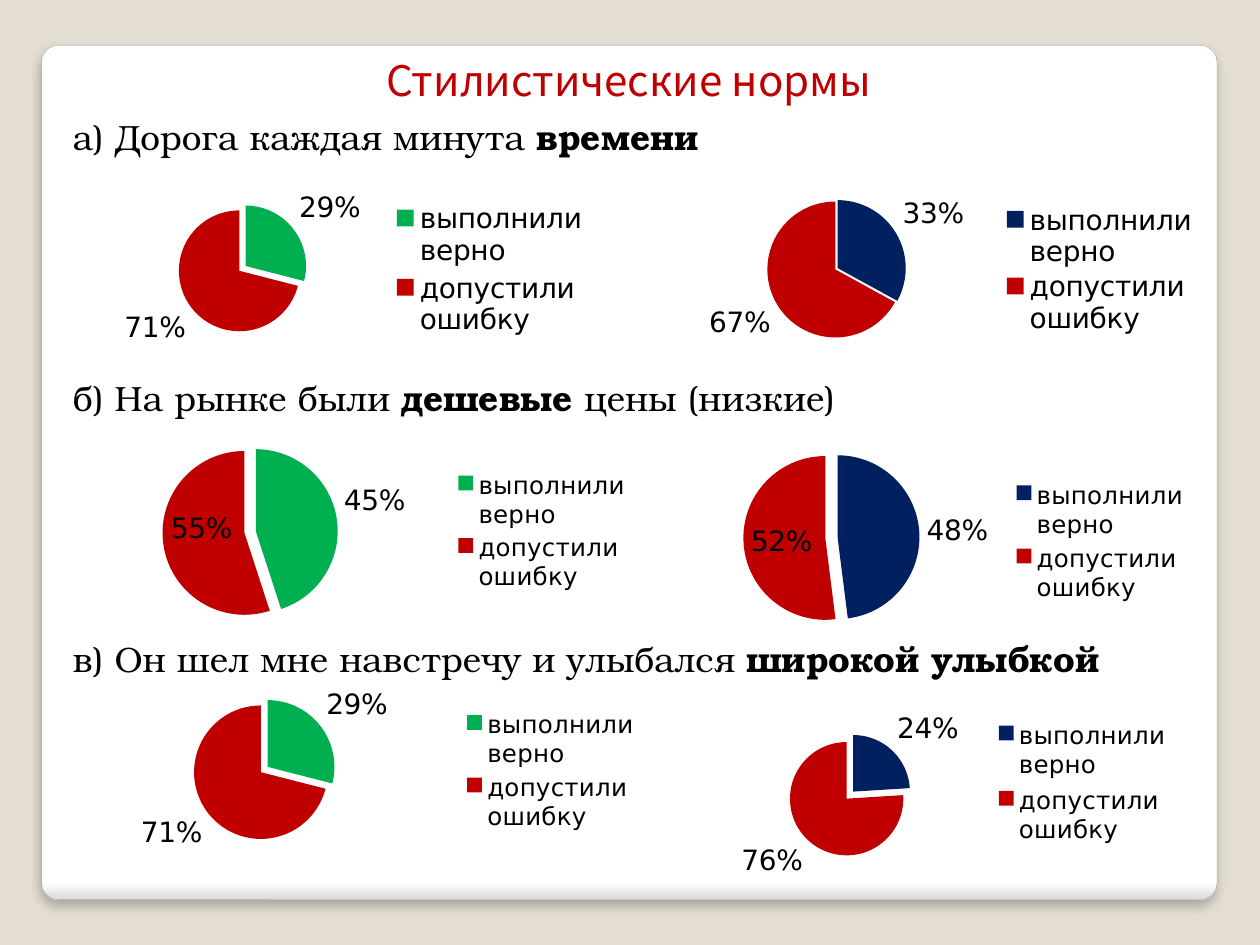
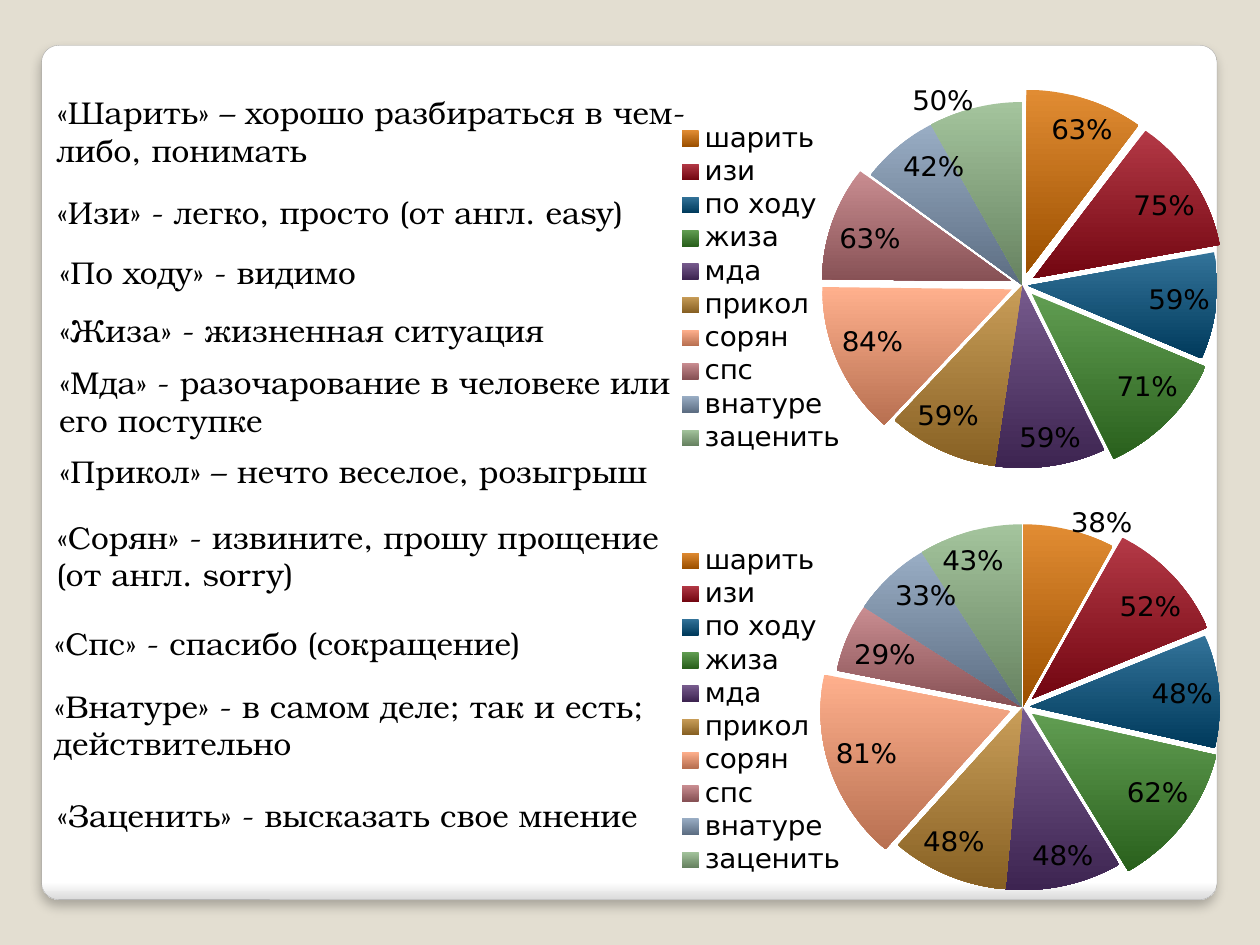
from lxml import etree
from pptx import Presentation
from pptx.chart.data import CategoryChartData
from pptx.dml.color import RGBColor
from pptx.enum.chart import XL_CHART_TYPE, XL_LABEL_POSITION, XL_LEGEND_POSITION
from pptx.enum.shapes import MSO_SHAPE
from pptx.enum.text import MSO_ANCHOR, PP_ALIGN
from pptx.oxml import parse_xml
from pptx.oxml.ns import nsdecls, qn
from pptx.util import Inches, Pt

PIE = XL_CHART_TYPE.PIE
RIGHT = XL_LEGEND_POSITION.RIGHT
OUT, IN = XL_LABEL_POSITION.OUTSIDE_END, XL_LABEL_POSITION.INSIDE_END
FIT = XL_LABEL_POSITION.BEST_FIT
CARD = MSO_SHAPE.ROUNDED_RECTANGLE
MIDDLE, CENTER = MSO_ANCHOR.MIDDLE, PP_ALIGN.CENTER

COLORS = {
    "back": "E3DED1", "card": "FFFFFF", "rim": "DADADA", "edge": "A4A4A4",
    "text": "000000", "title": "C00000",
    "wrong": "C00000", "green": "00B050", "navy": "002060",
}
SLANG = {
    "шарить": "D96F00", "изи": "A00818", "по ходу": "005080", "жиза": "398527",
    "мда": "553270", "прикол": "BB8630", "сорян": "FF9C70", "спс": "BC7076",
    "внатуре": "8098B5", "заценить": "8DB585",
}
SERIF, SANS, HEAD = "TeX Gyre Bonum", "DejaVu Sans", "Noto Sans CJK KR"
ANSWERS = ["выполнили верно", "допустили ошибку"]


def rgb(code):
    return RGBColor.from_string(code)


def tone(code, goal, part):
    """Mix a colour with a grey level (0 to 255) by the given part."""
    parts = [int(code[i:i + 2], 16) for i in (0, 2, 4)]
    return "".join(f"{round(p + (goal - p) * part):02X}" for p in parts)


def blend(fill, top, base, start=0):
    """Vertical two-colour gradient, the first colour held until start."""
    fill.gradient()
    fill.gradient_angle = 270
    for stop, code, place in zip(fill.gradient_stops, (top, base), (start, 1)):
        stop.color.rgb = rgb(code)
        stop.position = place


def layout(frame, box, inner=False):
    """Manual chart layout: box in slide inches, frame the chart's own box."""
    left, top, wide, high = frame
    x, y, w, h = box
    sizes = {"x": (x - left) / wide, "y": (y - top) / high, "w": w / wide, "h": h / high}
    node = parse_xml(f"<c:layout {nsdecls('c')}><c:manualLayout/></c:layout>")
    marks = {"layoutTarget": "inner"} if inner else {}
    marks |= {"xMode": "edge", "yMode": "edge"}
    marks |= {key: f"{size:.4f}" for key, size in sizes.items()}
    for key, mark in marks.items():
        etree.SubElement(node[0], qn(f"c:{key}")).set("val", mark)
    return node


class Deck:
    def __init__(self):
        self.prs = Presentation()
        self.prs.slide_width, self.prs.slide_height = Inches(10), Inches(7.5)
        self.slide = None

    def add(self, kind):
        self.slide = self.prs.slides.add_slide(self.prs.slide_layouts[kind])

    def style(self, font, **form):
        form = {"name": SERIF, "size": Pt(18)} | form
        font.color.rgb = rgb(form.pop("color", COLORS["text"]))
        for key, item in form.items():
            setattr(font, key, item)

    def base(self):
        """Put the background and the white card on the master."""
        master = self.prs.slide_master
        master.background.fill.solid()
        master.background.fill.fore_color.rgb = rgb(COLORS["back"])
        card = self.slide.shapes.add_shape(CARD, *map(Inches, (0.33, 0.36, 9.33, 6.78)))
        card.adjustments[0] = 0.02
        blend(card.fill, COLORS["card"], COLORS["rim"], 0.98)
        card.line.color.rgb = rgb(COLORS["edge"])
        card.line.width = Pt(0.16)
        card.shadow.inherit = False
        card.element.spPr.find(qn("a:effectLst")).append(parse_xml(
            f'<a:outerShdw {nsdecls("a")} blurRad="{Pt(6)}" dist="{Pt(4)}" dir="5400000">'
            '<a:srgbClr val="000000"><a:alpha val="25000"/></a:srgbClr></a:outerShdw>'))
        master.shapes.element.insert(2, card.element)

    def title(self, text):
        shape = self.slide.shapes.title
        for key, size in zip(("left", "top", "width", "height"), (0.5, 0.38, 8.98, 0.5)):
            setattr(shape, key, Inches(size))
        shape.text_frame.vertical_anchor = MIDDLE
        para = shape.text_frame.paragraphs[0]
        para.alignment = CENTER
        run = para.add_run()
        run.text = text
        self.style(run.font, name=HEAD, size=Pt(24), color=COLORS["title"])

    def text(self, text, box, size):
        """Text box; words between asterisks are bold."""
        frame = self.slide.shapes.add_textbox(*map(Inches, box)).text_frame
        frame.word_wrap = True
        for i, part in enumerate(text.split("*")):
            if part:
                run = frame.paragraphs[0].add_run()
                run.text = part
                self.style(run.font, size=Pt(size), bold=i % 2 == 1)

    def pie(self, frame, names, values, hues, bursts, spots, disc, key, size=16, shade=False):
        """Pie chart; disc is centre x, y and radius, key is the legend box."""
        data = CategoryChartData(number_format="0%")
        data.categories = names
        data.add_series("Series 1", [v / 100 for v in values])
        chart = self.slide.shapes.add_chart(PIE, *map(Inches, frame), data).chart
        chart.has_title = False
        self.style(chart.font, name=SANS, size=Pt(16))
        plot = chart.plots[0]
        plot.vary_by_categories = True
        for i, hue in enumerate(hues):
            point = plot.series[0].points[i]
            fill = point.format.fill
            if shade:
                blend(fill, tone(hue, 255, 0.2), tone(hue, 0, 0.28))
            else:
                fill.solid()
                fill.fore_color.rgb = rgb(hue)
            point.data_label.position = spots[i]
            if i in bursts:
                node = point.format.fill._xPr.getparent()
                burst = parse_xml(f'<c:explosion {nsdecls("c")} val="{bursts[i]}"/>')
                node.find(qn("c:spPr")).addprevious(burst)

        x, y, half = disc
        area = chart._chartSpace.chart.plotArea
        for old in area.findall(qn("c:layout")):
            area.remove(old)
        area.insert(0, layout(frame, (x - half, y - half, 2 * half, 2 * half), True))

        chart.has_legend = True
        legend = chart.legend
        legend.position = RIGHT
        legend.include_in_layout = False
        self.style(legend.font, name=SANS, size=Pt(size))
        legend._element.find(qn("c:legendPos")).addnext(layout(frame, key))


def norms(deck):
    deck.add(5)
    deck.base()
    deck.title("Стилистические нормы")
    for text, top in (
        ("а) Дорога каждая минута *времени*", 0.87),
        ("б) На рынке были *дешевые* цены (низкие)", 2.94),
        ("в) Он шел мне навстречу и улыбался *широкой улыбкой*", 5.01),
    ):
        deck.text(text, (0.48, top, 8.98, 0.44), 20)

    # frame, right answers, colour, burst, wrong label, disc, legend, legend size
    for frame, right, hue, burst, spot, disc, key, size in (
        ((0.53, 1.3, 4.47, 1.67), 29, "green", 13, OUT, (1.9, 2.15, 0.48), (3.11, 1.57, 1.55, 1.15), 16),
        ((5, 1.3, 4.98, 1.66), 33, "navy", 4, OUT, (6.63, 2.14, 0.54), (7.95, 1.6, 1.55, 1.09), 16),
        ((0.44, 3.33, 4.67, 1.77), 45, "green", 14, IN, (1.94, 4.23, 0.65), (3.6, 3.7, 1.4, 1.03), 14),
        ((5, 3.38, 4.67, 1.77), 48, "navy", 15, IN, (6.55, 4.27, 0.65), (8.03, 3.77, 1.4, 1.05), 14),
        ((0.51, 5.23, 4.67, 1.77), 29, "green", 13, OUT, (2.07, 6.13, 0.53), (3.67, 5.6, 1.4, 1.03), 14),
        ((5, 5.23, 4.83, 1.91), 24, "navy", 17, OUT, (6.72, 6.34, 0.45), (7.89, 5.66, 1.4, 1.1), 14),
    ):
        deck.pie(frame, ANSWERS, (right, 100 - right), (COLORS[hue], COLORS["wrong"]),
                 {0: burst}, (OUT, spot), disc, key, size)


def slang(deck):
    deck.add(6)
    for text, left, top in (
        ("«Шарить» – хорошо разбираться в чем-либо, понимать", 0.35, 0.69),
        ("«Изи» - легко, просто (от англ. easy)", 0.35, 1.48),
        ("«По ходу» - видимо", 0.37, 1.96),
        ("«Жиза» - жизненная ситуация", 0.37, 2.42),
        ("«Мда» - разочарование в человеке или его поступке", 0.37, 2.83),
        ("«Прикол» – нечто веселое, розыгрыш", 0.37, 3.54),
        ("«Сорян» - извините, прошу прощение (от англ. sorry)", 0.35, 4.06),
        ("«Спс» - спасибо (сокращение)", 0.33, 4.9),
        ("«Внатуре» - в самом деле; так и есть; действительно", 0.33, 5.4),
        ("«Заценить» - высказать свое мнение", 0.35, 6.27),
    ):
        deck.text(text, (left, top, 5.35, 0.4), 18)

    spots = [FIT] * 7 + [IN, IN, FIT]
    for top, values, bursts in (
        (0.56, (63, 75, 59, 71, 59, 59, 84, 63, 42, 50), {0: 7, 1: 7, 2: 3, 3: 7, 6: 6, 7: 6}),
        (3.91, (38, 52, 48, 62, 48, 48, 81, 29, 33, 43), {1: 7, 2: 4, 3: 6, 6: 7}),
    ):
        deck.pie((4.61, top, 5.07, 3.29), list(SLANG), values, SLANG.values(), bursts, spots,
                 (8.13, top + 1.64, 1.51), (5.38, top + 0.28, 1.33, 2.77), shade=True)


def main():
    deck = Deck()
    norms(deck)
    slang(deck)
    deck.prs.save("out.pptx")


if __name__ == "__main__":
    main()
